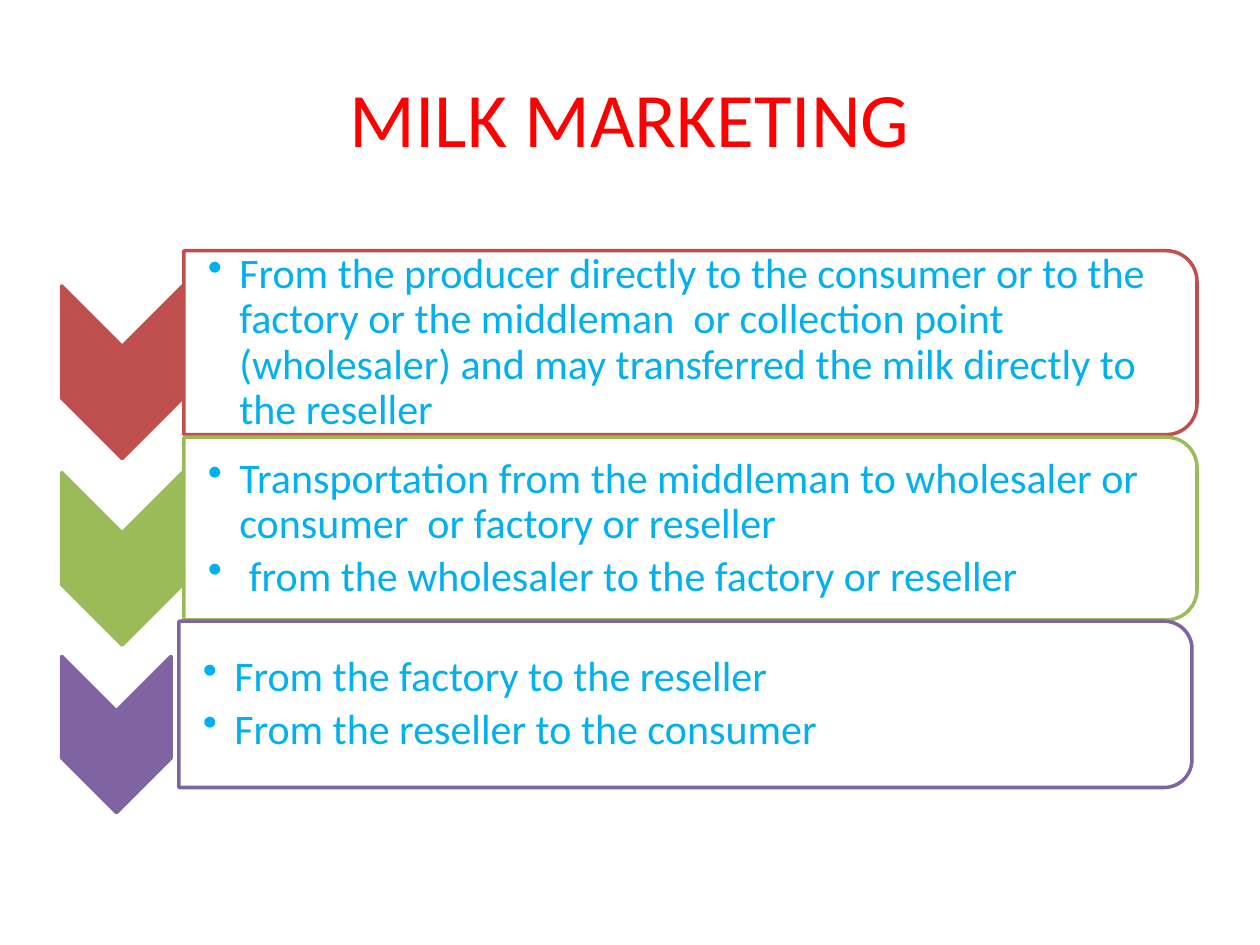
from lxml.etree import SubElement
from pptx import Presentation
from pptx.dml.color import RGBColor
from pptx.enum.shapes import MSO_SHAPE
from pptx.enum.text import MSO_ANCHOR, PP_ALIGN
from pptx.oxml.ns import qn
from pptx.util import Inches, Pt

FONT = "Calibri"
BLUE = "00B0F0"
PAD = 0.07    # text inset from a panel's top and bottom
DROP = 0.28   # chevron offset below its panel's top
EDGE = 0.49   # left edge of all chevrons

# panel left, top, height; chevron height; colour; bullets
STEPS = [
    (1.46, 1.99, 1.46, 1.37, "C0504D", [
        "From the producer directly to the consumer or to the factory or "
        "the middleman  or collection point (wholesaler) and may "
        "transferred the milk directly to the reseller"]),
    (1.46, 3.47, 1.45, 1.37, "9BBB59", [
        "Transportation from the middleman to wholesaler or consumer  or "
        "factory or reseller",
        " from the wholesaler to the factory or reseller"]),
    (1.42, 4.93, 1.32, 1.24, "8064A2", [
        "From the factory to the reseller",
        "From the reseller to the consumer"]),
]


def color(text):
    return RGBColor.from_string(text)


class Deck:
    def __init__(self):
        self.prs = Presentation()
        self.prs.slide_width, self.prs.slide_height = Inches(10), Inches(7.5)
        self.slide = self.prs.slides.add_slide(self.prs.slide_layouts[5])

    def style(self, para, size, tint):
        para.font.name = FONT
        para.font.size = Pt(size)
        para.font.color.rgb = color(tint)

    def title(self, text):
        box = self.slide.shapes.title
        box.left, box.top = Inches(0.5), Inches(0.3)
        box.width, box.height = Inches(9), Inches(1.25)
        box.text_frame.text = text
        box.text_frame.vertical_anchor = MSO_ANCHOR.MIDDLE
        para = box.text_frame.paragraphs[0]
        para.alignment = PP_ALIGN.CENTER
        self.style(para, 44, "FF0000")

    def turned(self, kind, x, y, w, h, fill, line):
        """Add a shape turned by 90 degrees that fills the box x, y, w, h."""
        shape = self.slide.shapes.add_shape(
            kind, Inches(x + (w - h) / 2), Inches(y + (h - w) / 2),
            Inches(h), Inches(w))
        shape.rotation = 90
        shape.shadow.inherit = False
        shape.fill.solid()
        shape.fill.fore_color.rgb = color(fill)
        shape.line.color.rgb = color(line)
        shape.line.width = Pt(2)
        return shape

    def chevron(self, y, h, tint):
        self.turned(MSO_SHAPE.CHEVRON, EDGE, y, 0.7 * h, h, tint, tint)

    def panel(self, x, y, h, tint):
        shape = self.turned(MSO_SHAPE.ROUND_2_SAME_RECTANGLE,
                            x, y, 8.04, h, "FFFFFF", tint)
        fill = shape.fill._xPr.find(qn("a:solidFill"))
        SubElement(fill[0], qn("a:alpha"), val="90000")

    def bullets(self, x, y, h, items):
        box = self.slide.shapes.add_textbox(
            Inches(x), Inches(y), Inches(7.97), Inches(h))
        frame = box.text_frame
        frame.word_wrap = True
        frame.vertical_anchor = MSO_ANCHOR.MIDDLE
        frame.margin_left = Inches(0.19)
        frame.margin_top = frame.margin_right = Inches(0.02)
        frame.margin_bottom = Inches(0.02)
        for i, item in enumerate(items):
            para = frame.add_paragraph() if i else frame.paragraphs[0]
            para.text = item
            para.level = 1
            para.line_spacing = 0.9
            para.space_after = Pt(4)
            self.style(para, 24, BLUE)
            props = para._p.get_or_add_pPr()
            props.set("marL", str(Inches(0.25)))
            props.set("indent", str(-Inches(0.25)))
            mark = SubElement(props, qn("a:buChar"), char="•")
            props.find(qn("a:defRPr")).addprevious(mark)


def main():
    deck = Deck()
    deck.title("MILK MARKETING")
    for x, y, h, tall, tint, items in STEPS:
        deck.chevron(y + DROP, tall, tint)
        deck.panel(x, y, h, tint)
        deck.bullets(x, y + PAD, h - 2 * PAD, items)
    deck.prs.save("out.pptx")


if __name__ == "__main__":
    main()
